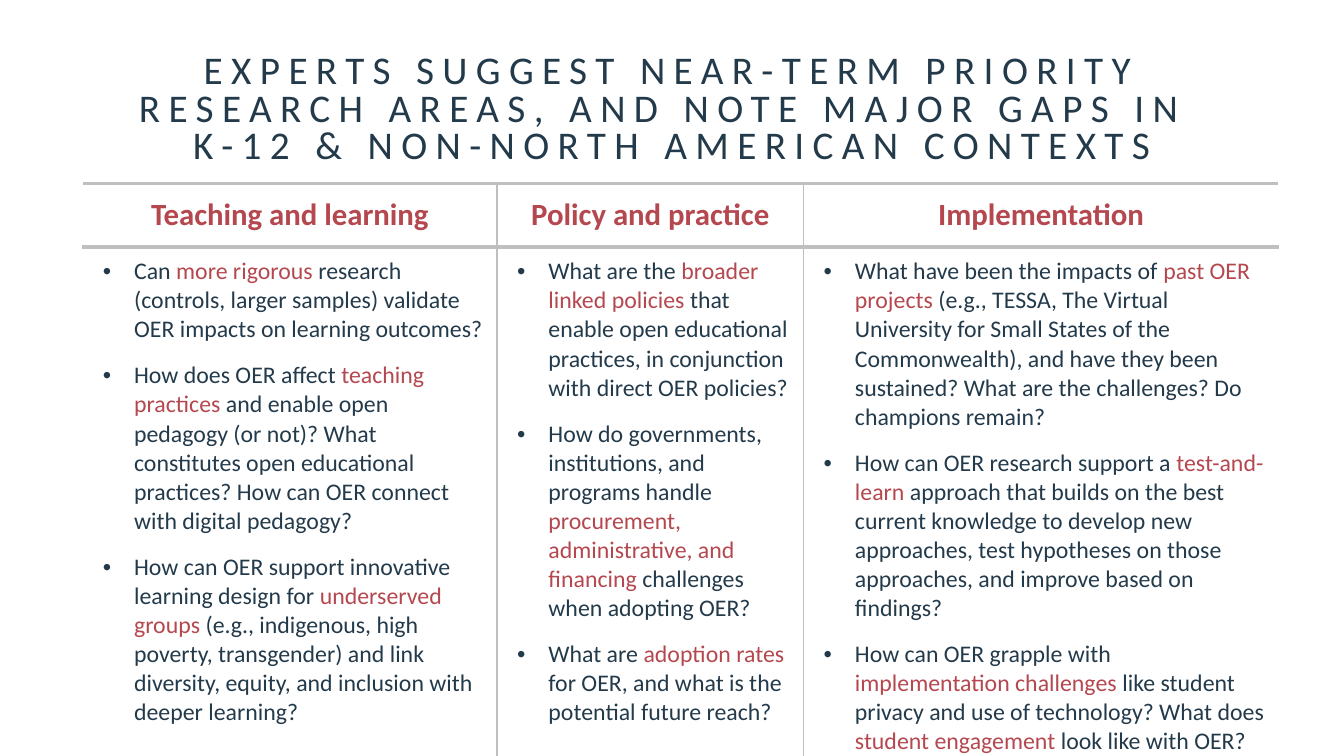
from lxml import etree
from pptx import Presentation
from pptx import util as u
from pptx.dml.color import RGBColor
from pptx.enum import text as t
from pptx.oxml import ns

INK = RGBColor(0x23, 0x3A, 0x4B)
RED = RGBColor(0xB5, 0x47, 0x4F)
GRAY = RGBColor(0xBF, 0xBF, 0xBF)
FACE = "Calibri"

TITLE = [
    "EXPERTS SUGGEST NEAR-TERM PRIORITY RESEARCH AREAS, AND NOTE MAJOR GAPS IN ",
    "K-12 & NON-NORTH AMERICAN CONTEXTS",
]

# Each column: heading, width, questions; every second run is stressed
AREAS = [
    ("Teaching and learning", 4.11, [
        ["Can ", "more rigorous ",
         "research (controls, larger samples) validate OER impacts on "
         "learning outcomes?"],
        ["How does OER affect ", "teaching practices ",
         "and enable open pedagogy (or not)? What constitutes open "
         "educational practices? How can OER connect with digital pedagogy?"],
        ["How can OER support innovative learning design for ",
         "underserved groups ",
         "(e.g., indigenous, high poverty, transgender) and link diversity, "
         "equity, and inclusion with deeper learning?"],
    ]),
    ("Policy and practice", 3.04, [
        ["What are the ", "broader linked policies ",
         "that enable open educational practices, in conjunction with "
         "direct OER policies?"],
        ["How do governments, institutions, and programs handle ",
         "procurement, administrative, and financing ",
         "challenges when adopting OER?"],
        ["What are ", "adoption rates ",
         "for OER, and what is the potential future reach?"],
    ]),
    ("Implementation", 4.71, [
        ["What have been the impacts of ", "past OER projects ",
         "(e.g., TESSA, The Virtual University for Small States of the "
         "Commonwealth), and have they been sustained? What are the "
         "challenges? Do champions remain?"],
        ["How can OER research support a ", "test-and-learn ",
         "approach that builds on the best current knowledge to develop new "
         "approaches, test hypotheses on those approaches, and improve based "
         "on findings?"],
        ["How can OER grapple with ", "implementation challenges ",
         "like student privacy and use of technology? What does ",
         "student engagement ", "look like with OER?"],
    ]),
]


def add_run(par, words, size, color, bold=False):
    run = par.add_run()
    run.text = words
    font = run.font
    font.name, font.size, font.bold = FACE, u.Pt(size), bold
    font.color.rgb = color
    return run


def set_title(slide):
    title = slide.shapes.title
    title.left, title.top = u.Inches(1), u.Inches(0.54)
    title.width, title.height = u.Inches(11.33), u.Inches(1)
    frame = title.text_frame
    frame.margin_left = frame.margin_right = 0
    frame.margin_top = frame.margin_bottom = 0
    frame.word_wrap = True
    frame.auto_size = t.MSO_AUTO_SIZE.NONE
    frame.vertical_anchor = t.MSO_ANCHOR.TOP
    par = frame.paragraphs[0]
    par.alignment = t.PP_ALIGN.CENTER
    par.line_spacing = 0.8
    for i, line in enumerate(TITLE):
        if i:
            par.add_line_break()
        run = add_run(par, line, 28, INK)
        run.font._element.set("spc", "600")


def rule_cell(cell, sides):
    """Draw the given borders (side: points), then clear the fill."""
    props = cell._tc.get_or_add_tcPr()
    for side in "LRTB":
        if side in sides:
            line = etree.SubElement(props, ns.qn("a:ln" + side),
                                    w=str(u.Pt(sides[side])))
            fill = etree.SubElement(line, ns.qn("a:solidFill"))
            etree.SubElement(fill, ns.qn("a:srgbClr"), val=str(GRAY))
    cell.fill.background()


def fill_head(cell, words):
    cell.vertical_anchor = t.MSO_ANCHOR.MIDDLE
    par = cell.text_frame.paragraphs[0]
    par.alignment = t.PP_ALIGN.CENTER
    add_run(par, words, 22, RED, True)


def fill_list(cell, items):
    cell.margin_left = u.Inches(0.2)
    cell.margin_right = cell.margin_top = cell.margin_bottom = u.Inches(0.1)
    frame = cell.text_frame
    for i, item in enumerate(items):
        par = frame.add_paragraph() if i else frame.paragraphs[0]
        props = par._p.get_or_add_pPr()
        props.set("marL", str(u.Inches(0.31)))
        props.set("indent", str(-u.Inches(0.31)))
        etree.SubElement(props, ns.qn("a:buFont"), typeface="Arial")
        etree.SubElement(props, ns.qn("a:buChar"), char="•")
        par.space_before = u.Pt(6 if i else 0)
        par.space_after = u.Pt(6)
        for j, words in enumerate(item):
            add_run(par, words, 17, RED if j % 2 else INK)


def add_grid(slide):
    grid = slide.shapes.add_table(
        2, len(AREAS), u.Inches(0.82), u.Inches(1.82),
        u.Inches(11.86), u.Inches(5.41)).table
    grid.first_row = grid.horz_banding = False
    grid.rows[0].height = u.Inches(0.63)
    grid.rows[1].height = u.Inches(4.78)
    for col, (head, width, items) in enumerate(AREAS):
        grid.columns[col].width = u.Inches(width)
        sides = {"T": 3}
        if col > 0:
            sides["L"] = 1
        if col < len(AREAS) - 1:
            sides["R"] = 1
        top, body = grid.cell(0, col), grid.cell(1, col)
        fill_head(top, head)
        rule_cell(top, {**sides, "B": 3})
        fill_list(body, items)
        rule_cell(body, sides)


def main():
    deck = Presentation()
    deck.slide_width, deck.slide_height = u.Inches(13.33), u.Inches(7.5)
    slide = deck.slides.add_slide(deck.slide_layouts[5])
    # Heading
    set_title(slide)
    # Research areas by column
    add_grid(slide)
    deck.save("out.pptx")


if __name__ == "__main__":
    main()
